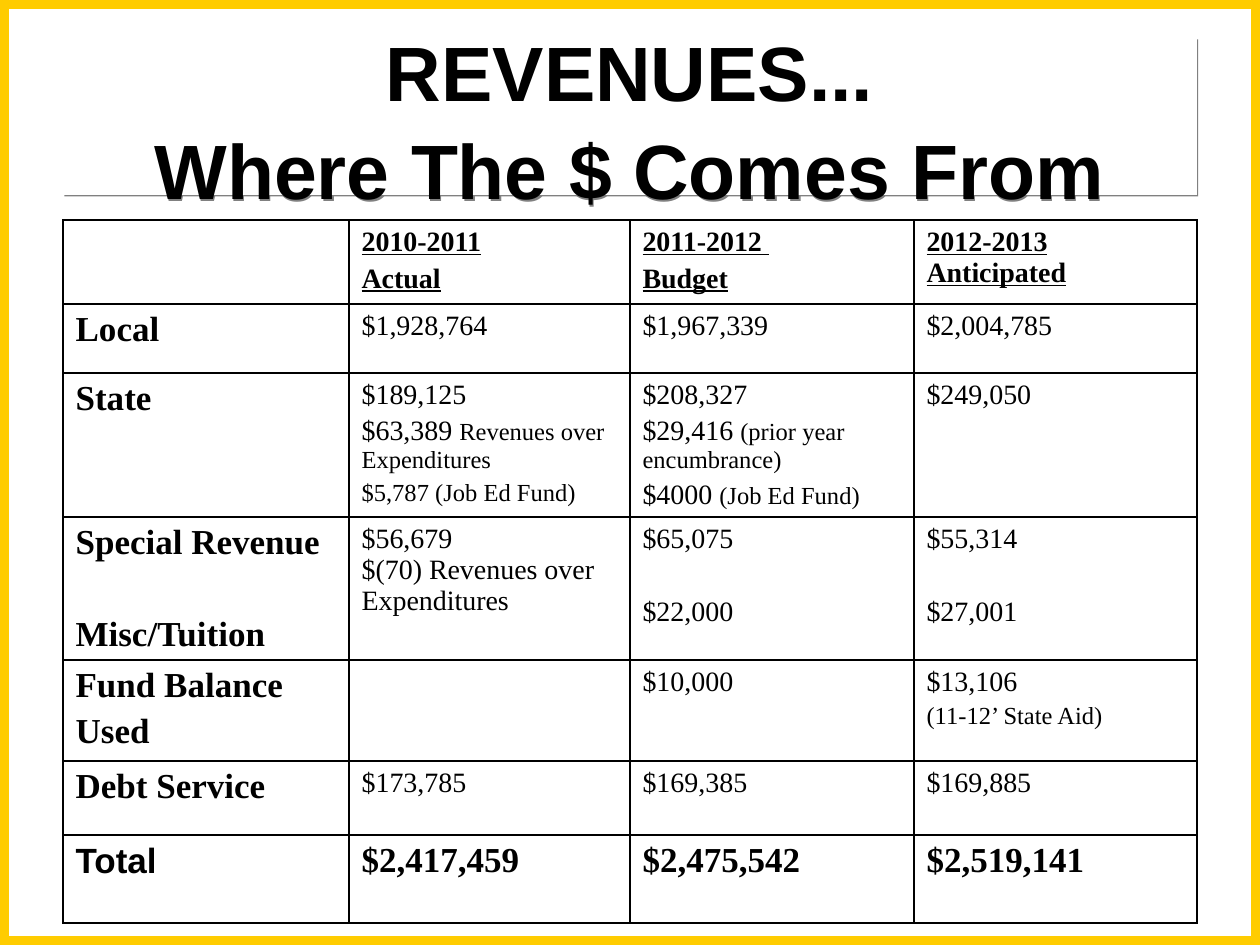
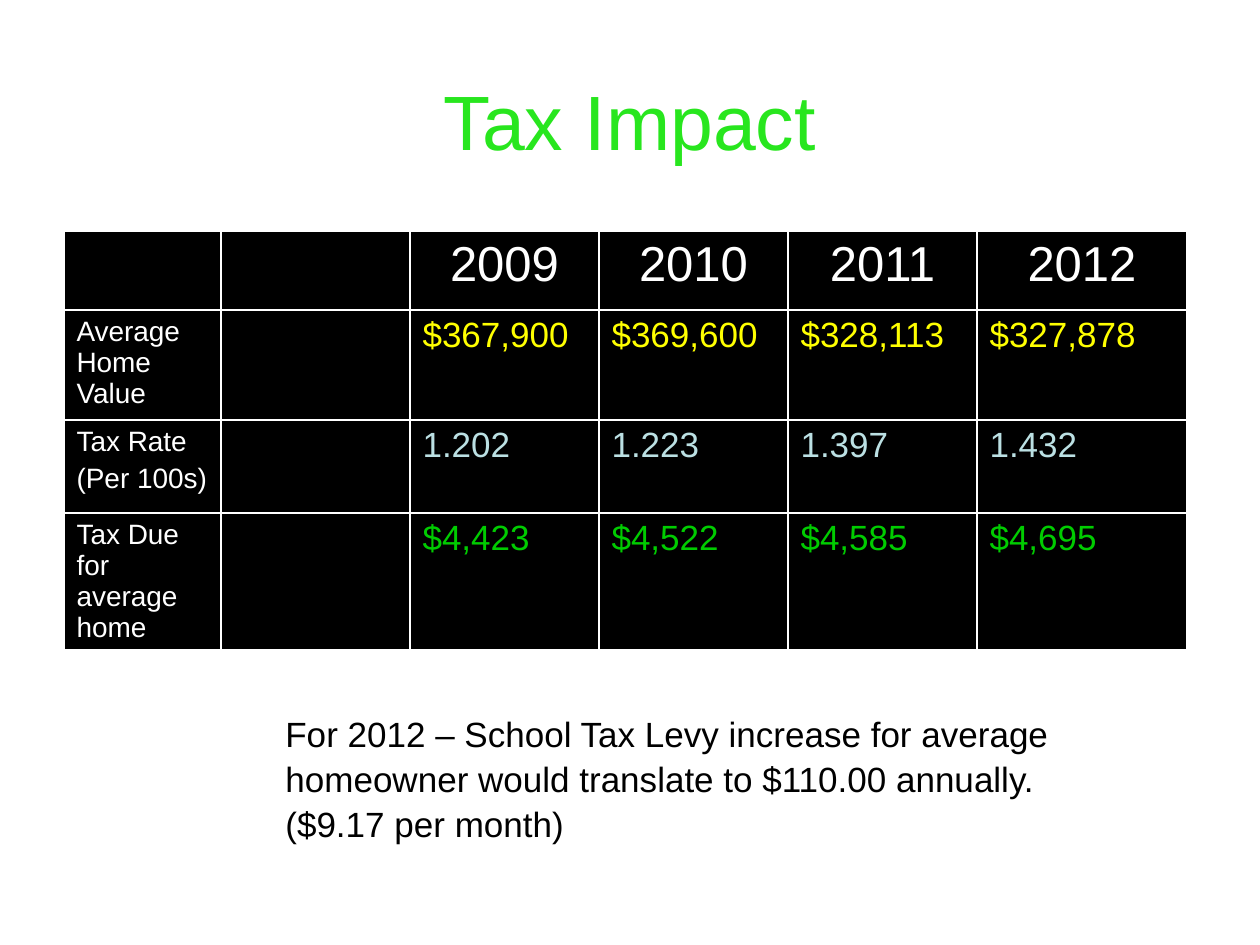
from lxml import etree
from pptx import Presentation
from pptx.dml.color import RGBColor
from pptx.enum.shapes import MSO_SHAPE
from pptx.enum.text import MSO_ANCHOR, PP_ALIGN
from pptx.oxml.ns import qn
from pptx.util import Emu, Pt

SCALE = 914400 / 126
WIDE, HIGH = 1260, 945
RECT = MSO_SHAPE.RECTANGLE
MIDDLE = MSO_ANCHOR.MIDDLE
CENTER, LEFT = PP_ALIGN.CENTER, PP_ALIGN.LEFT
SANS, SERIF = "Arial", "Times New Roman"
SMALL, BODY, LARGE, HEAD, TITLE = 14, 16, 20, 28, 44
LEAD = 1.07
BEFORE, APART = 0.2, 1.5

BLACK = RGBColor(0x00, 0x00, 0x00)
WHITE = RGBColor(0xFF, 0xFF, 0xFF)
GRAY = RGBColor(0x80, 0x80, 0x80)
GOLD = RGBColor(0xFF, 0xCC, 0x00)
LIME = RGBColor(0x28, 0xE6, 0x1E)
GREEN = RGBColor(0x00, 0xCC, 0x00)
YELLOW = RGBColor(0xFF, 0xFF, 0x00)
AQUA = RGBColor(0xBB, 0xE0, 0xE3)

FUNDS = [
    ["", "2010-2011\nActual", "2011-2012 \nBudget", "2012-2013 Anticipated"],
    ["Local", "$1,928,764", "$1,967,339", "$2,004,785"],
    ["State",
     "$189,125\n$63,389 |Revenues over Expenditures\n|$5,787 (Job Ed Fund)",
     "$208,327\n$29,416 |(prior year encumbrance)\n$4000 |(Job Ed Fund)",
     "$249,050"],
    ["Special Revenue\nMisc/Tuition",
     "$56,679\v$(70) Revenues over Expenditures",
     "$65,075\n$22,000", "$55,314\n$27,001"],
    ["Fund Balance\nUsed", "", "$10,000", "$13,106\n|(11-12’ State Aid)"],
    ["Debt Service", "$173,785", "$169,385", "$169,885"],
    ["Total", "$2,417,459", "$2,475,542", "$2,519,141"],
]
FUND_COLS = [286, 281, 284, 283]
FUND_ROWS = [84, 69, 144, 143, 101, 74, 88]
SPLIT_ROW = 3

TAXES = [
    ["", "", "2009", "2010", "2011", "2012"],
    ["Average Home Value", "", "$367,900", "$369,600", "$328,113", "$327,878"],
    ["Tax Rate\n(Per 100s)", "", "1.202", "1.223", "1.397", "1.432"],
    ["Tax Due for average home", "", "$4,423", "$4,522", "$4,585", "$4,695"],
]
TAX_COLS = [157, 189, 189, 189, 189, 210]
TAX_ROWS = [79, 110, 93, 136]
TAX_HUES = [WHITE, YELLOW, AQUA, GREEN]


def px(num):
    """Turn px into EMU."""
    return Emu(round(num * SCALE))


def style(para, size, hue, face=SANS, bold=False, line=False):
    """Format every run and line break of a paragraph."""
    for run in para.runs:
        font = run.font
        font.name, font.size, font.bold = face, Pt(size), bold
        font.underline = line
        font.color.rgb = hue
    for gap in para._p.findall(qn("a:br")):
        etree.SubElement(gap, qn("a:rPr"), sz=str(size * 100))


def box(slide, left, top, width, height, fill=None):
    """Add a plain rectangle without line or shadow."""
    shape = slide.shapes.add_shape(RECT, *map(px, (left, top, width, height)))
    shape.shadow.inherit = False
    shape.line.fill.background()
    if fill is None:
        shape.fill.background()
    else:
        shape.fill.solid()
        shape.fill.fore_color.rgb = fill
    return shape


def title(slide, text, hue, bold=False):
    """Add the centred slide title."""
    shape = box(slide, 63, 38, 1134, 157, WHITE)
    frame = shape.text_frame
    frame.word_wrap = True
    frame.vertical_anchor = MIDDLE
    para = frame.paragraphs[0]
    para.text = text
    para.alignment = CENTER
    para.line_spacing = LEAD
    style(para, TITLE, hue, bold=bold)
    return shape


def shade(shape):
    """Give a shape a thin hard shadow to the lower right."""
    effect = shape._element.spPr.find(qn("a:effectLst"))
    cast = etree.SubElement(effect, qn("a:outerShdw"), blurRad="0",
                            dist=str(Pt(1.1)), dir="2700000", algn="ctr")
    etree.SubElement(cast, qn("a:srgbClr"), val=str(GRAY))


def border(slide):
    """Frame the whole slide in gold."""
    shape = box(slide, 0, 0, WIDE, HIGH)
    shape.line.color.rgb = GOLD
    shape.line.width = Pt(10.75)


def edge(cell, hue):
    """Draw the four borders of a cell."""
    props = cell._tc.get_or_add_tcPr()
    for side in ("lnL", "lnR", "lnT", "lnB"):
        line = etree.SubElement(props, qn("a:" + side), w=str(Pt(1)))
        fill = etree.SubElement(line, qn("a:solidFill"))
        etree.SubElement(fill, qn("a:srgbClr"), val=str(hue))


def write(cell, text, size, hue, face, bold=False, line=False,
          align=LEFT, gap=BEFORE):
    """Fill a cell; a bar in the text starts a small run."""
    frame = cell.text_frame
    for num, part in enumerate(text.split("\n")):
        para = frame.paragraphs[0] if num == 0 else frame.add_paragraph()
        main, _, note = part.partition("|")
        para.text = main
        para.alignment = align
        para.space_before = Pt(size * (gap if num else BEFORE))
        style(para, size, hue, face, bold, line)
        if note:
            run = para.add_run()
            run.text = note
            run.font.name, run.font.size = face, Pt(SMALL)
            run.font.color.rgb = hue


def grid(slide, left, top, cols, rows, fill, rule):
    """Add a table with plain fills and ruled cells."""
    spot = map(px, (left, top, sum(cols), sum(rows)))
    table = slide.shapes.add_table(len(rows), len(cols), *spot).table
    table.first_row = table.horz_banding = False
    for col, width in zip(table.columns, cols):
        col.width = px(width)
    for row, height in zip(table.rows, rows):
        row.height = px(height)
    for cell in table.iter_cells():
        edge(cell, rule)
        cell.fill.solid()
        cell.fill.fore_color.rgb = fill
    return table


def funds(slide):
    """Build the revenue table."""
    table = grid(slide, 63, 220, FUND_COLS, FUND_ROWS, WHITE, BLACK)
    last = len(FUNDS) - 1
    for r, row in enumerate(FUNDS):
        for c, text in enumerate(row):
            if not text:
                continue
            write(table.cell(r, c), text,
                  LARGE if c == 0 or r == last else BODY, BLACK,
                  SANS if c == 0 and r == last else SERIF,
                  bold=c == 0 or r in (0, last), line=r == 0,
                  gap=APART if r == SPLIT_ROW else BEFORE)


def taxes(slide):
    """Build the tax table."""
    table = grid(slide, 64, 231, TAX_COLS, TAX_ROWS, BLACK, WHITE)
    for r, row in enumerate(TAXES):
        for c, text in enumerate(row):
            if not text:
                continue
            size = HEAD if r == 0 else BODY if c == 0 else LARGE
            write(table.cell(r, c), text, size,
                  WHITE if c == 0 else TAX_HUES[r], SANS,
                  align=CENTER if r == 0 else LEFT)


def note(slide, text):
    """Add the remark below the tax table."""
    shape = slide.shapes.add_textbox(*map(px, (273, 703, 851, 139)))
    frame = shape.text_frame
    frame.word_wrap = True
    frame.text = text
    para = frame.paragraphs[0]
    para.line_spacing = LEAD
    style(para, LARGE, BLACK)


def main():
    """Build and save both slides."""
    deck = Presentation()
    deck.slide_width, deck.slide_height = px(WIDE), px(HIGH)
    blank = deck.slide_layouts[6]

    slide = deck.slides.add_slide(blank)
    shade(title(slide, "REVENUES...\vWhere The $ Comes From", BLACK, True))
    border(slide)
    funds(slide)

    slide = deck.slides.add_slide(blank)
    title(slide, "Tax Impact", LIME)
    taxes(slide)
    note(slide, "For 2012 – School Tax Levy increase for average homeowner "
                "would translate to $110.00 annually. ($9.17 per month)")
    deck.save("out.pptx")


if __name__ == "__main__":
    main()
